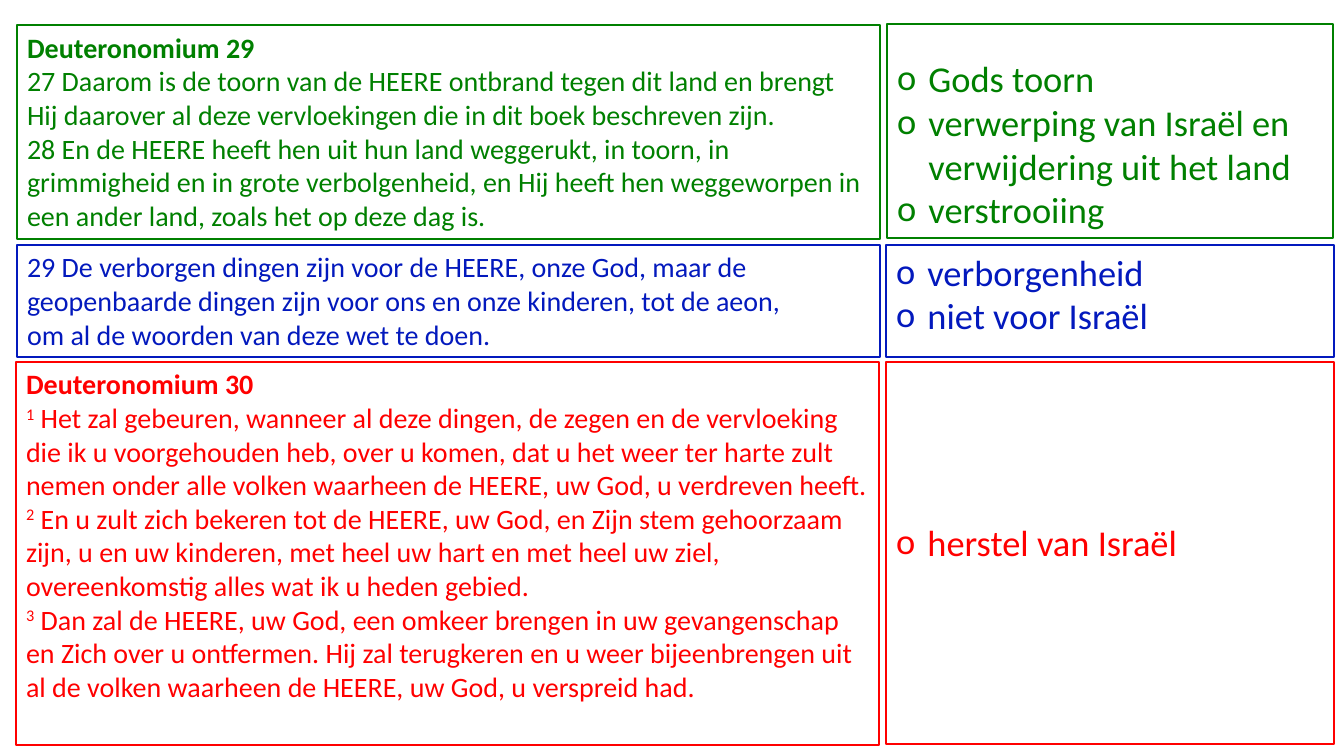
from lxml.etree import SubElement
from pptx import Presentation
from pptx.dml.color import RGBColor
from pptx.enum.shapes import MSO_SHAPE
from pptx.enum.text import MSO_ANCHOR, PP_ALIGN
from pptx.oxml.ns import qn
from pptx.util import Inches, Pt

COLORS = {"wrath": "008000", "hidden": "0319BD", "restoration": "FF0000"}
FONT = "Calibri"
BULLET_INDENT = Inches(0.31)

# Each passage: colour key, heading, verses as (superscript number, text),
# key points, space above the key points, verse box and points box
PASSAGES = [
    ("wrath", "Deuteronomium 29", [
        ("", "27 Daarom is de toorn van de HEERE ontbrand tegen dit land en brengt "
             "Hij daarover al deze vervloekingen die in dit boek beschreven zijn."),
        ("", "28 En de HEERE heeft hen uit hun land weggerukt, in toorn, in "
             "grimmigheid en in grote verbolgenheid, en Hij heeft hen weggeworpen in "
             "een ander land, zoals het op deze dag is."),
    ], ["Gods toorn", "verwerping van Israël en verwijdering uit het land", "verstrooiing"],
     0.32, (0.17, 0.25, 8.56, 2.12), (8.8, 0.24, 4.42, 2.12)),
    ("hidden", "", [
        ("", "29 De verborgen dingen zijn voor de HEERE, onze God, maar de "
             "geopenbaarde dingen zijn voor ons en onze kinderen, tot de aeon,"),
        ("", "om al de woorden van deze wet te doen."),
    ], ["verborgenheid", "niet voor Israël"],
     0.05, (0.17, 2.43, 8.56, 1.11), (8.79, 2.43, 4.44, 1.11)),
    ("restoration", "Deuteronomium 30", [
        ("1", " Het zal gebeuren, wanneer al deze dingen, de zegen en de vervloeking "
              "die ik u voorgehouden heb, over u komen, dat u het weer ter harte zult "
              "nemen onder alle volken waarheen de HEERE, uw God, u verdreven heeft."),
        ("2", " En u zult zich bekeren tot de HEERE, uw God, en Zijn stem gehoorzaam "
              "zijn, u en uw kinderen, met heel uw hart en met heel uw ziel, "
              "overeenkomstig alles wat ik u heden gebied."),
        ("3", " Dan zal de HEERE, uw God, een omkeer brengen in uw gevangenschap "
              "en Zich over u ontfermen. Hij zal terugkeren en u weer bijeenbrengen uit "
              "al de volken waarheen de HEERE, uw God, u verspreid had."),
    ], ["herstel van Israël"],
     1.57, (0.16, 3.59, 8.56, 3.8), (8.79, 3.59, 4.44, 3.79)),
]


def add_text(paragraph, text, color, size=20, bold=False, superscript=False):
    run = paragraph.add_run()
    run.text = text
    run.font.name = FONT
    run.font.size = Pt(size)
    run.font.bold = bold
    run.font.color.rgb = RGBColor.from_string(color)
    if superscript:
        run.font._element.set("baseline", "30000")


def add_bullet(paragraph):
    properties = paragraph._p.get_or_add_pPr()
    properties.set("marL", str(BULLET_INDENT))
    properties.set("indent", str(-BULLET_INDENT))
    SubElement(properties, qn("a:buFont"), typeface=FONT)
    SubElement(properties, qn("a:buChar"), char="o")


def add_frame(slide, box, color, count, top_inset=0.05):
    """Draw an outlined box and return its paragraphs."""
    frame = slide.shapes.add_shape(MSO_SHAPE.RECTANGLE, *map(Inches, box))
    frame.shadow.inherit = False
    frame.fill.background()
    frame.line.color.rgb = RGBColor.from_string(color)
    frame.line.width = Pt(1.5)
    content = frame.text_frame
    content.word_wrap = True
    content.vertical_anchor = MSO_ANCHOR.TOP
    content.margin_top = Inches(top_inset)
    for _ in range(count - 1):
        content.add_paragraph()
    for paragraph in content.paragraphs:
        paragraph.alignment = PP_ALIGN.LEFT
    return content.paragraphs


def add_verses(slide, box, color, heading, verses):
    lines = ([("", heading)] if heading else []) + verses
    paragraphs = add_frame(slide, box, color, len(lines))
    for paragraph, (number, text) in zip(paragraphs, lines):
        if number:
            add_text(paragraph, number, color, superscript=True)
        add_text(paragraph, text, color, bold=text == heading)


def add_key_points(slide, box, color, points, top_inset):
    paragraphs = add_frame(slide, box, color, len(points), top_inset)
    for paragraph, point in zip(paragraphs, points):
        add_bullet(paragraph)
        add_text(paragraph, point, color, size=26)


def main():
    presentation = Presentation()
    presentation.slide_width = Inches(13.33)
    presentation.slide_height = Inches(7.5)
    slide = presentation.slides.add_slide(presentation.slide_layouts[6])

    # Verses on the left, their key points on the right
    for key, heading, verses, points, top_inset, verse_box, points_box in PASSAGES:
        add_verses(slide, verse_box, COLORS[key], heading, verses)
        add_key_points(slide, points_box, COLORS[key], points, top_inset)

    presentation.save("out.pptx")


if __name__ == "__main__":
    main()
